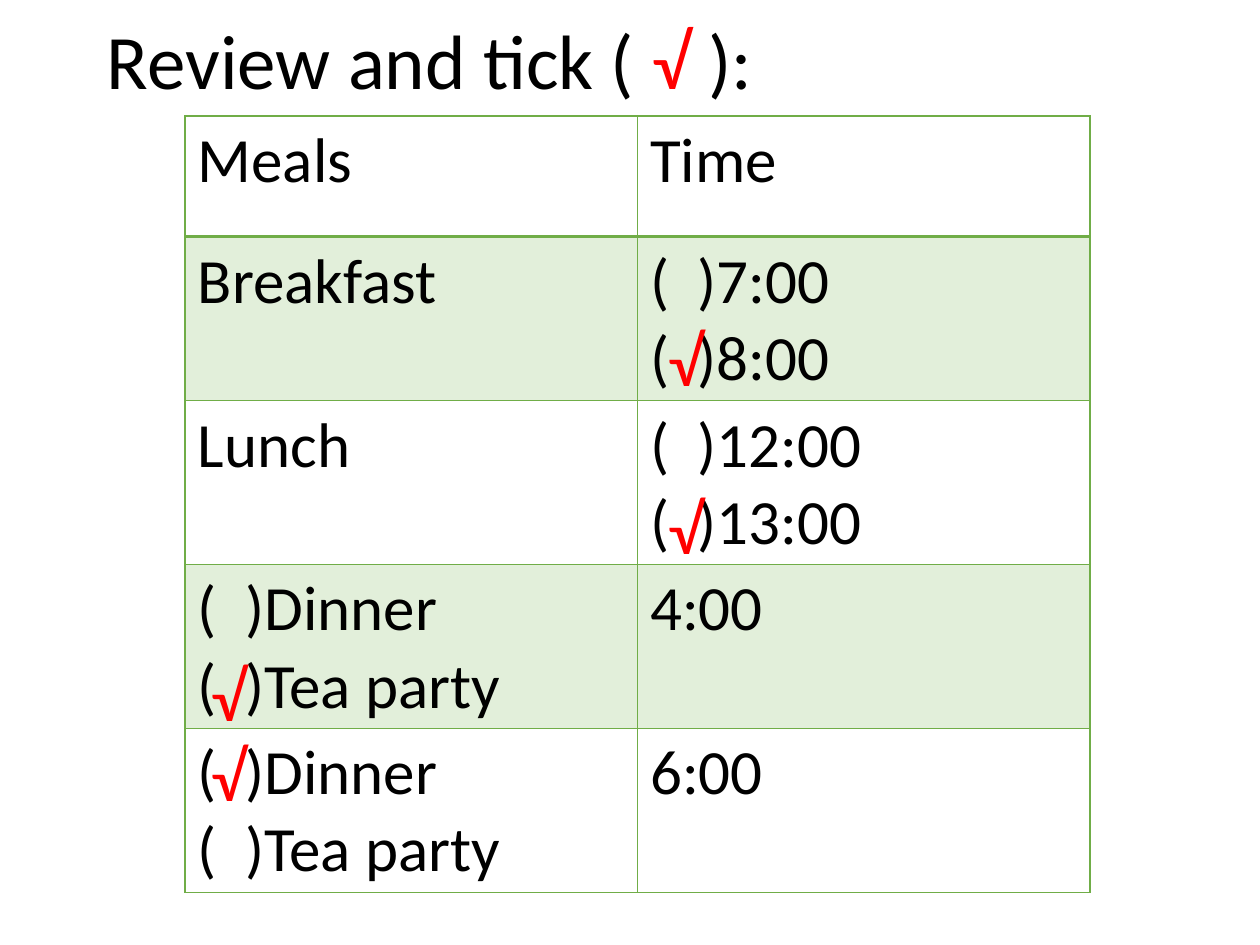
import pptx
import pptx.dml.color
import pptx.enum.text
import pptx.oxml
import pptx.oxml.ns
import pptx.util

BLACK = pptx.dml.color.RGBColor(0x00, 0x00, 0x00)
RED = pptx.dml.color.RGBColor(0xFF, 0x00, 0x00)
GREEN = pptx.dml.color.RGBColor(0x70, 0xAD, 0x47)
PALE_GREEN = pptx.dml.color.RGBColor(0xE2, 0xEF, 0xDA)

TICK = "√"
MEALS = [
    ("Meals", "Time"),
    ("Breakfast", "(  )7:00\n(  )8:00"),
    ("Lunch", "(  )12:00\n(  )13:00"),
    ("(  )Dinner\n(  )Tea party", "4:00"),
    ("(  )Dinner\n(  )Tea party", "6:00"),
]
MEAL_COLUMN, TIME_COLUMN = 15.8, 52.1
TICKS = [(TIME_COLUMN, 24.6), (TIME_COLUMN, 38), (MEAL_COLUMN, 51.2), (MEAL_COLUMN, 57.6)]


class MealSlide:
    font = "Calibri"
    columns, rows = 100, 75

    def __init__(self, presentation):
        self.unit_width = presentation.slide_width / self.columns
        self.unit_height = presentation.slide_height / self.rows
        self.slide = presentation.slides.add_slide(presentation.slide_layouts[6])

    def box(self, left, top, width, height):
        return (
            round(left * self.unit_width),
            round(top * self.unit_height),
            round(width * self.unit_width),
            round(height * self.unit_height),
        )

    def format_run(self, run, size, color):
        run.font.name = self.font
        run.font.size = pptx.util.Pt(size)
        run.font.color.rgb = color

    def title(self, parts, place):
        text_frame = self.slide.shapes.add_textbox(*self.box(*place)).text_frame
        text_frame.word_wrap = True
        text_frame.vertical_anchor = pptx.enum.text.MSO_ANCHOR.MIDDLE
        paragraph = text_frame.paragraphs[0]
        paragraph.line_spacing = 0.9
        for text, color in parts:
            run = paragraph.add_run()
            run.text = text
            self.format_run(run, 44, color)

    def tick(self, left, top):
        shape = self.slide.shapes.add_textbox(*self.box(left, top, 4.8, 7.7))
        text_frame = shape.text_frame
        text_frame.word_wrap = False
        text_frame.auto_size = pptx.enum.text.MSO_AUTO_SIZE.SHAPE_TO_FIT_TEXT
        text_frame.text = TICK
        self.format_run(text_frame.paragraphs[0].runs[0], 40, RED)

    def borders(self, cell, widths):
        properties = cell._tc.get_or_add_tcPr()
        for side, width in zip("LRTB", widths):
            properties.append(pptx.oxml.parse_xml(
                f'<a:ln{side} {pptx.oxml.ns.nsdecls("a")} w="{pptx.util.Pt(width)}">'
                f'<a:solidFill><a:srgbClr val="{GREEN}"/></a:solidFill></a:ln{side}>'
            ))

    def table(self, entries, place):
        shape = self.slide.shapes.add_table(len(entries), len(entries[0]), *self.box(*place))
        table = shape.table
        table.first_row = False
        table.horz_banding = False
        for row_index, texts in enumerate(entries):
            top = 2 if row_index == 1 else 1
            bottom = 2 if row_index == 0 else 1
            for column_index, text in enumerate(texts):
                cell = table.cell(row_index, column_index)
                cell.text_frame.text = text
                for paragraph in cell.text_frame.paragraphs:
                    self.format_run(paragraph.runs[0], 36, BLACK)
                self.borders(cell, (1, 1, top, bottom))
                if row_index % 2:
                    cell.fill.solid()
                    cell.fill.fore_color.rgb = PALE_GREEN
                else:
                    cell.fill.background()


def main():
    presentation = pptx.Presentation()
    presentation.slide_width = pptx.util.Inches(10)
    presentation.slide_height = pptx.util.Inches(7.5)
    meal_slide = MealSlide(presentation)
    meal_slide.title(
        [("Review and tick ( ", BLACK), (TICK, RED), (" ):", BLACK)],
        (7.5, -2.1, 86.2, 14.5),
    )
    meal_slide.table(MEALS, (14.7, 9.2, 71.8, 48))
    for left, top in TICKS:
        meal_slide.tick(left, top)
    presentation.save("out.pptx")


if __name__ == "__main__":
    main()
